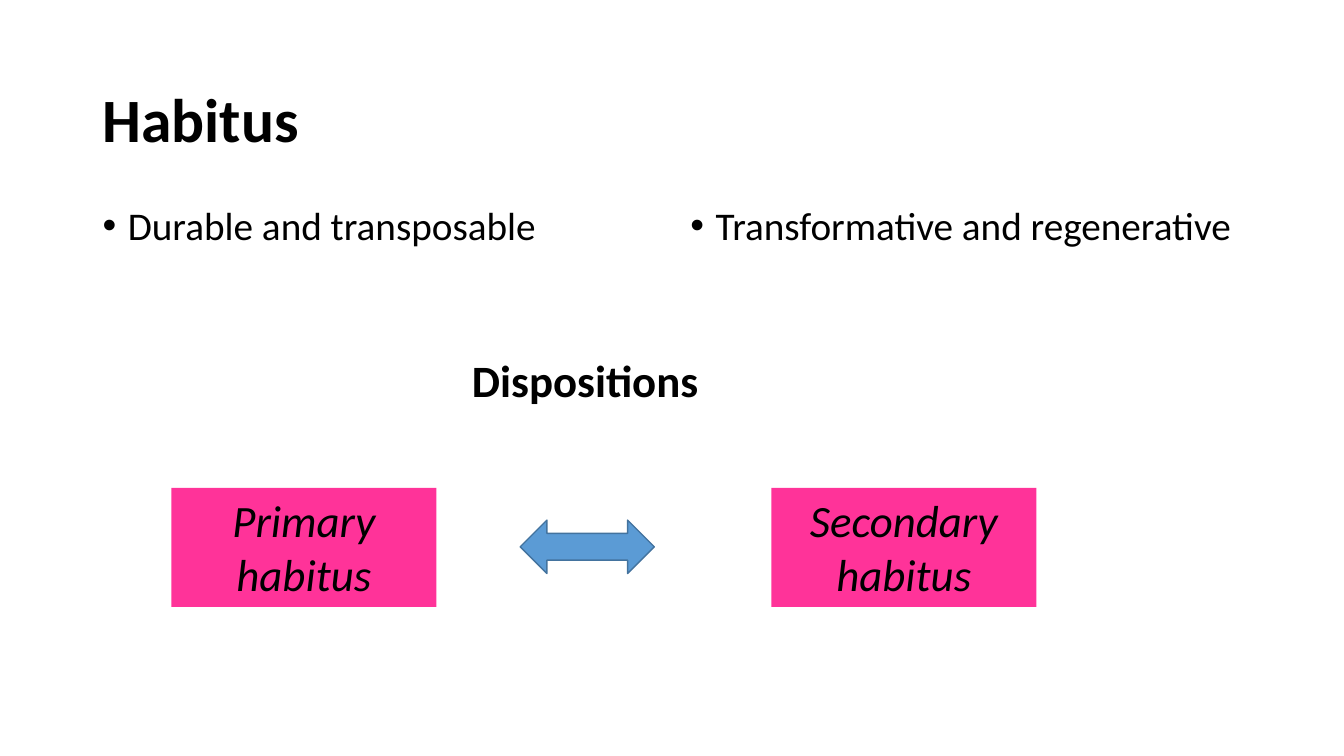
from dataclasses import dataclass

from lxml import etree
from pptx import Presentation
from pptx.dml.color import RGBColor
from pptx.enum.shapes import MSO_SHAPE
from pptx.enum.text import MSO_ANCHOR, PP_ALIGN
from pptx.oxml.ns import qn
from pptx.util import Inches, Pt

RECT, ARROW = MSO_SHAPE.RECTANGLE, MSO_SHAPE.LEFT_RIGHT_ARROW
TOP, MIDDLE = MSO_ANCHOR.TOP, MSO_ANCHOR.MIDDLE
LEFT, CENTER = PP_ALIGN.LEFT, PP_ALIGN.CENTER


@dataclass(frozen=True)
class Theme:
    font: str = "Calibri"
    ink: str = "000000"
    pink: str = "FF3399"
    blue: str = "5B9BD5"
    edge: str = "43739E"
    title: int = 44
    body: int = 28
    label: int = 32


THEME = Theme()


def color(code):
    return RGBColor.from_string(code)


def write(shape, text, size, align=LEFT, anchor=TOP, bold=False,
          italic=False, bullet=False, spacing=1.0):
    frame = shape.text_frame
    frame.word_wrap = True
    frame.vertical_anchor = anchor
    para = frame.paragraphs[0]
    para.text = text
    para.alignment = align
    para.line_spacing = spacing
    if bullet:
        props = para._p.get_or_add_pPr()
        props.set("marL", str(Inches(0.25)))
        props.set("indent", str(Inches(-0.25)))
        font = etree.SubElement(props, qn("a:buFont"))
        font.set("typeface", "Arial")
        mark = etree.SubElement(props, qn("a:buChar"))
        mark.set("char", "•")
    font = para.font
    font.name, font.size = THEME.font, Pt(size)
    font.bold, font.italic = bold, italic
    font.color.rgb = color(THEME.ink)


def add_text(slide, box, text, size, **style):
    shape = slide.shapes.add_textbox(*map(Inches, box))
    write(shape, text, size, **style)


def add_block(slide, kind, box, fill, edge=None):
    shape = slide.shapes.add_shape(kind, *map(Inches, box))
    shape.shadow.inherit = False
    shape.fill.solid()
    shape.fill.fore_color.rgb = color(fill)
    if edge:
        shape.line.color.rgb = color(edge)
        shape.line.width = Pt(1)
    else:
        shape.line.fill.background()
    return shape


# Title across the top
def add_title(slide, box):
    add_text(slide, box, "Habitus", THEME.title, anchor=MIDDLE,
             bold=True, spacing=0.9)


# Two equal bullet columns
def add_points(slide, box):
    left, top, width, height = box
    gap = 0.16
    column = (width - gap) / 2
    points = ("Durable and transposable", "Transformative and regenerative")
    for i, point in enumerate(points):
        add_text(slide, (left + i * (column + gap), top, column, height),
                 point, THEME.body, bullet=True, spacing=0.9)


# Two habitus boxes with a double arrow between them
def add_pair(slide, box):
    left, top, width, height = box
    wide = 2.63
    for i, name in enumerate(("Primary habitus", "Secondary habitus")):
        place = (left + i * (width - wide), top, wide, height)
        block = add_block(slide, RECT, place, THEME.pink)
        write(block, name, THEME.label, align=CENTER, italic=True)
    add_block(slide, ARROW, (left + 3.46, top + 0.32, 1.33, 0.53),
              THEME.blue, THEME.edge)


def main():
    deck = Presentation()
    deck.slide_width, deck.slide_height = Inches(13.33), Inches(7.5)
    slide = deck.slides.add_slide(deck.slide_layouts[6])
    add_title(slide, (0.92, 0.49, 11.5, 1.45))
    add_points(slide, (0.92, 2, 11.5, 1))
    # Heading above the pair
    add_text(slide, (2.61, 3.45, 6.39, 0.64), "Dispositions", THEME.label,
             align=CENTER, bold=True)
    add_pair(slide, (1.7, 4.84, 8.58, 1.18))
    deck.save("out.pptx")


if __name__ == "__main__":
    main()
